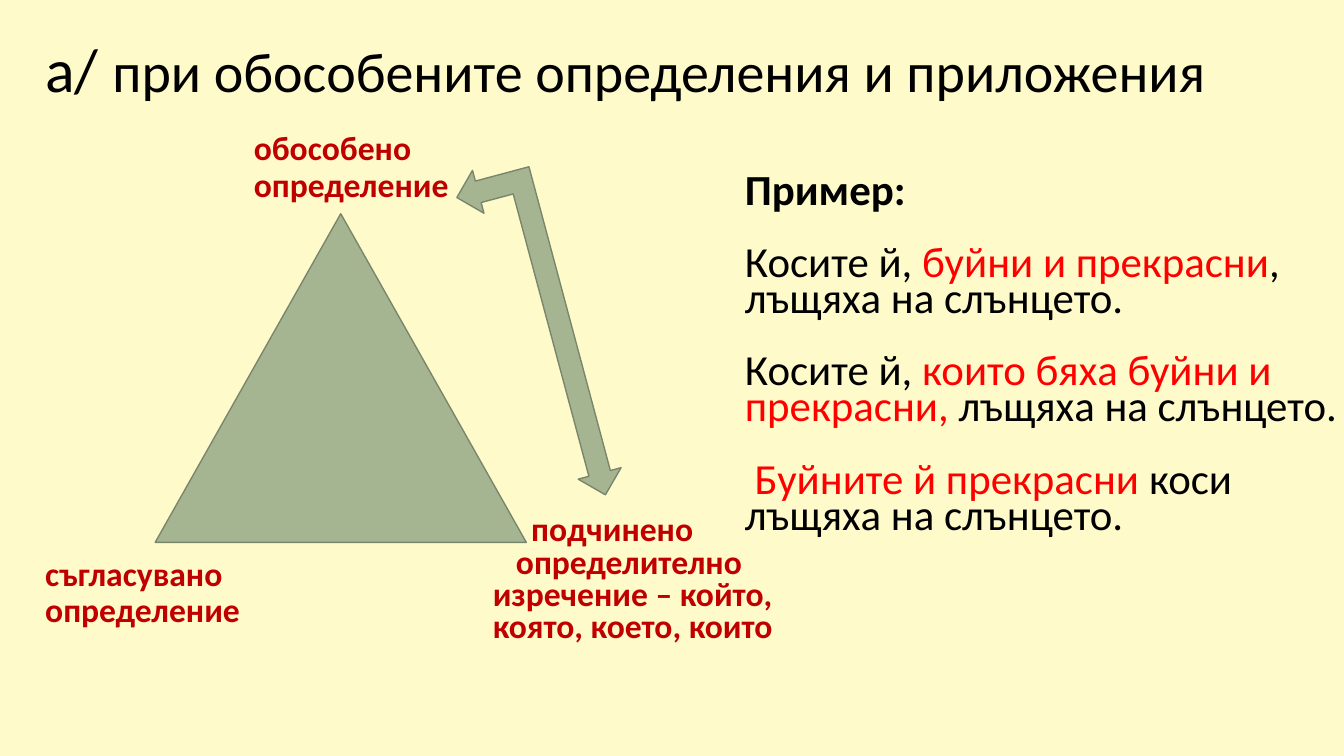
from pptx import Presentation, util as u
from pptx.dml.color import RGBColor
from pptx.enum import shapes, text

BLACK, RED, DARK_RED = "000000", "FF0000", "C00000"
SAGE, SAGE_EDGE, CREAM = "A5B592", "7A866C", "FEFAC9"
FONT = "Calibri"
EXAMPLE_SIZE = 30.6

presentation = Presentation()
presentation.slide_width = u.Inches(13.33)
presentation.slide_height = u.Inches(7.5)
slide = presentation.slides.add_slide(presentation.slide_layouts[6])


def colour(target, value):
    """Give a fill or a font a solid colour."""
    if hasattr(target, "solid"):
        target.solid()
        target.fore_color.rgb = RGBColor.from_string(value)
    else:
        target.color.rgb = RGBColor.from_string(value)


def place(left, top, width, height):
    """Turn percentages of the slide into lengths."""
    column = presentation.slide_width / 100
    row = presentation.slide_height / 100
    return [u.Emu(round(length)) for length in
            (left * column, top * row, width * column, height * row)]


colour(slide.background.fill, CREAM)

# Triangle and the bent two-way arrow beside it
for preset, position, rotation in [
    (shapes.MSO_SHAPE.ISOSCELES_TRIANGLE, (11.55, 28.27, 27.61, 43.47), 0),
    (shapes.MSO_SHAPE.LEFT_UP_ARROW, (27.16, 38.13, 25.88, 11.73), 255),
]:
    shape = slide.shapes.add_shape(preset, *place(*position))
    shape.rotation = rotation
    shape.shadow.inherit = False
    colour(shape.fill, SAGE)
    colour(shape.line, SAGE_EDGE)
    shape.line.width = u.Pt(1)

# Text: each run is (words, size, colour, bold)
title = [[("а/ ", 44, BLACK, False),
          ("при обособените определения и приложения", 40, BLACK, False)]]
top_corner = [[("обособено определение", 24, DARK_RED, True)]]
left_corner = [[("съгласувано определение", 24, DARK_RED, True)]]
right_corner = [
    [("подчинено", 24, DARK_RED, True)],
    [("определително изречение – който, която, което, които", 24, DARK_RED, True)],
]
examples = [[("Пример:", EXAMPLE_SIZE, BLACK, True)]] + [
    [(before, EXAMPLE_SIZE, BLACK, False),
     (marked, EXAMPLE_SIZE, RED, False),
     (after, EXAMPLE_SIZE, BLACK, False)]
    for before, marked, after in [
        ("Косите й, ", "буйни и прекрасни", ", лъщяха на слънцето."),
        ("Косите й, ", "които бяха буйни и прекрасни, ", "лъщяха на слънцето."),
        (" ", "Буйните й прекрасни ", "коси лъщяха на слънцето."),
    ]
]

# Each box: position, line spacing, gap between paragraphs, first-line indents, text
for position, spacing, gap, indents, paragraphs in [
    ((2.63, 4.53, 97.37, 19.33), 0.9, 0, [0], title),
    ((18.15, 16.8, 16.35, 11.6), 0.9, 0, [0], top_corner),
    ((2.63, 73.07, 16.35, 11.6), 0.9, 0, [0], left_corner),
    ((35.93, 67.6, 22.73, 19.33), 0.8, 0, [0.38, 0.23], right_corner),
    ((54.69, 22.67, 47.94, 56.27), 0.7, 26, [0] * 4, examples),
]:
    text_frame = slide.shapes.add_textbox(*place(*position)).text_frame
    text_frame.word_wrap = True
    text_frame.vertical_anchor = text.MSO_ANCHOR.TOP
    for number, (runs, indent) in enumerate(zip(paragraphs, indents)):
        paragraph = text_frame.add_paragraph() if number else text_frame.paragraphs[0]
        paragraph.line_spacing = spacing
        paragraph.space_before = u.Pt(gap if number else 0)
        properties = paragraph._p.get_or_add_pPr()
        properties.set("marL", "0")
        properties.set("indent", str(u.Inches(indent)))
        for words, size, shade, bold in runs:
            run = paragraph.add_run()
            run.text = words
            run.font.name = FONT
            run.font.size = u.Pt(size)
            run.font.bold = bold
            colour(run.font, shade)

presentation.save("out.pptx")
